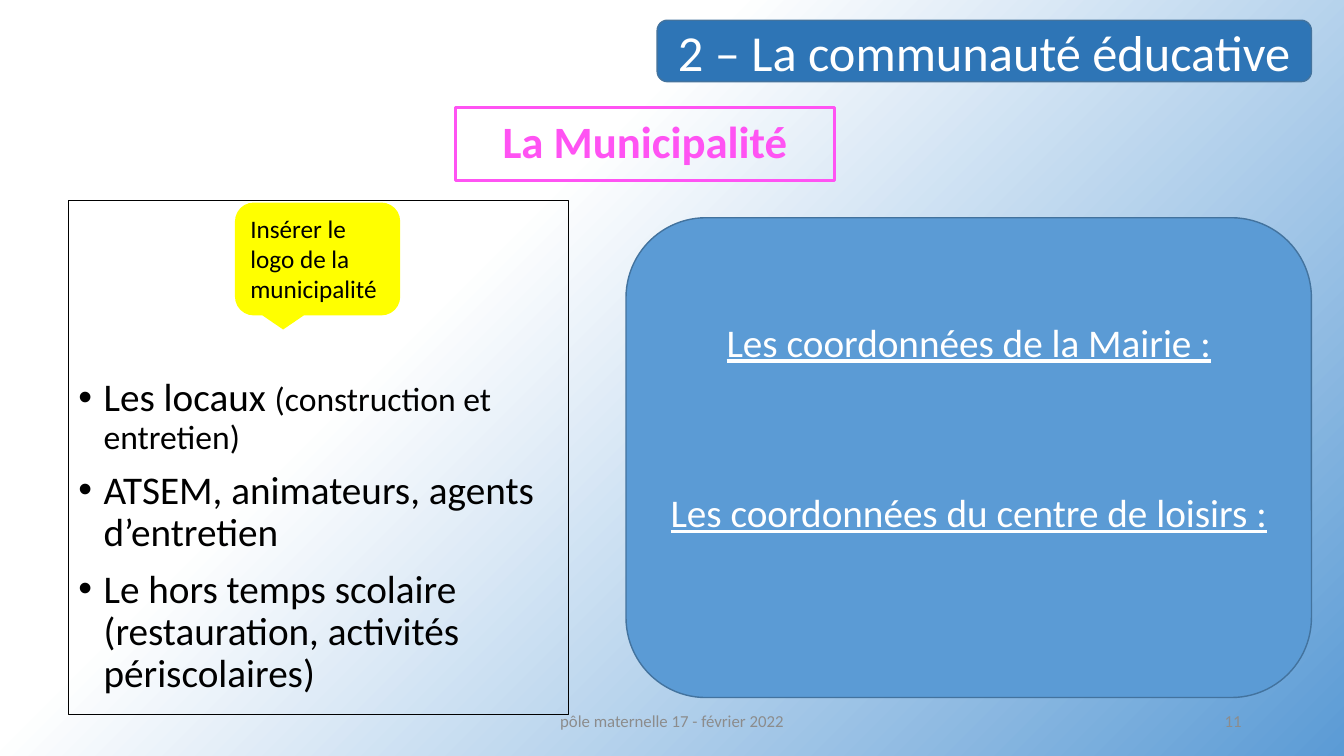
from copy import deepcopy

from lxml.etree import SubElement
from pptx import Presentation
from pptx.dml.color import RGBColor
from pptx.enum.shapes import MSO_SHAPE as Kind
from pptx.enum.text import MSO_ANCHOR as Anchor, PP_ALIGN as Align
from pptx.oxml.ns import qn
from pptx.util import Inches, Pt

WHITE, BLACK, GREY = "FFFFFF", "000000", "8C8C8C"
BLUE, DEEP, EDGE = "5B9BD5", "2E75B6", "43739E"
PINK, YELLOW = "FF53F3", "FFFF00"


def tint(code):
    return RGBColor.from_string(code)


class Deck:
    font = "Calibri"

    def __init__(self):
        self.prs = Presentation()
        self.prs.slide_width = Inches(13.333)
        self.prs.slide_height = Inches(7.5)
        self.slide = self.prs.slides.add_slide(self.prs.slide_layouts[6])

    def place(self, left, top, width, height):
        wide, high = self.prs.slide_width, self.prs.slide_height
        return [int(share * side / 100) for share, side in
                zip((left, top, width, height), (wide, high, wide, high))]

    def fade(self, stops, angle):
        fill = self.slide.background.fill
        fill.gradient()
        fill.gradient_angle = angle
        marks = self.slide.element.find(".//" + qn("a:gsLst"))
        while len(marks) < len(stops):
            marks.append(deepcopy(marks[0]))
        for mark, (spot, code) in zip(fill.gradient_stops, stops):
            mark.position = spot
            mark.color.rgb = tint(code)

    def box(self, kind, area, fill=None, line=None, weight=1, anchor=Anchor.MIDDLE):
        shape = self.slide.shapes.add_shape(kind, *self.place(*area))
        shape.shadow.inherit = False
        if fill:
            shape.fill.solid()
            shape.fill.fore_color.rgb = tint(fill)
        else:
            shape.fill.background()
        if line:
            shape.line.color.rgb = tint(line)
            shape.line.width = Pt(weight)
        else:
            shape.line.fill.background()
        return self.frame(shape, anchor)

    def label(self, area, text, align):
        box = self.slide.shapes.add_textbox(*self.place(*area))
        self.words(self.frame(box, Anchor.MIDDLE), [[(text, 12)]], GREY, align)

    def frame(self, shape, anchor):
        frame = shape.text_frame
        frame.word_wrap = True
        frame.vertical_anchor = anchor
        return frame

    def words(self, frame, paras, color, align=Align.CENTER, gap=0, lines=1.0,
              bullet=False, bold=None, under=None):
        for rank, runs in enumerate(paras):
            para = frame.add_paragraph() if rank else frame.paragraphs[0]
            para.alignment = align
            para.line_spacing = lines
            if rank:
                para.space_before = Pt(gap)
            if bullet:
                self.dot(para)
            for text, size in runs:
                run = para.add_run()
                run.text = text
                run.font.name = self.font
                run.font.size = Pt(size)
                run.font.color.rgb = tint(color)
                run.font.bold = bold
                run.font.underline = under

    def dot(self, para):
        props = para._p.get_or_add_pPr()
        props.set("marL", str(Inches(0.25)))
        props.set("indent", str(-Inches(0.25)))
        SubElement(props, qn("a:buFont"), typeface="Arial")
        SubElement(props, qn("a:buChar"), char="•")


def main():
    deck = Deck()
    deck.fade([(0, WHITE), (0.35, WHITE), (1, BLUE)], 315)

    duties = deck.box(Kind.RECTANGLE, (5.1, 26.53, 37.2, 68), line=BLACK,
                      weight=0.75, anchor=Anchor.TOP)
    duties.margin_top = Inches(1.76)
    deck.words(duties, [
        [("Les locaux ", 28), ("(construction et entretien)", 24)],
        [("ATSEM, animateurs, agents d’entretien", 28)],
        [("Le hors temps scolaire (restauration, activités périscolaires)", 28)],
    ], BLACK, Align.LEFT, gap=10, lines=0.9, bullet=True)

    title = deck.box(Kind.RECTANGLE, (33.9, 14.27, 28.2, 9.6), line=PINK, weight=2.25)
    deck.words(title, [[("La Municipalité", 32)]], PINK, lines=0.9, bold=True)

    hint = deck.box(Kind.ROUNDED_RECTANGULAR_CALLOUT, (17.48, 26.8, 12.3, 14.93),
                    fill=YELLOW, anchor=Anchor.TOP)
    deck.words(hint, [[("Insérer le logo de la municipalité", 18)]], BLACK, Align.LEFT)

    town = deck.box(Kind.ROUNDED_RECTANGLE, (46.58, 28.8, 51, 63.47), BLUE, EDGE)
    town.margin_bottom = Inches(0.66)
    deck.words(town, [
        [("Les coordonnées de la Mairie :", 28)],
        [("Les coordonnées du centre de loisirs :", 28)],
    ], WHITE, gap=88, under=True)

    head = deck.box(Kind.ROUNDED_RECTANGLE, (48.9, 2.67, 48.68, 8.13), DEEP, EDGE)
    deck.words(head, [[("2 – La communauté éducative", 36)]], WHITE)

    deck.label((33.13, 92.67, 33.75, 5.32), "pôle maternelle 17 - février 2022", Align.CENTER)
    deck.label((70.63, 92.67, 22.5, 5.32), "11", Align.RIGHT)
    deck.prs.save("out.pptx")


if __name__ == "__main__":
    main()
